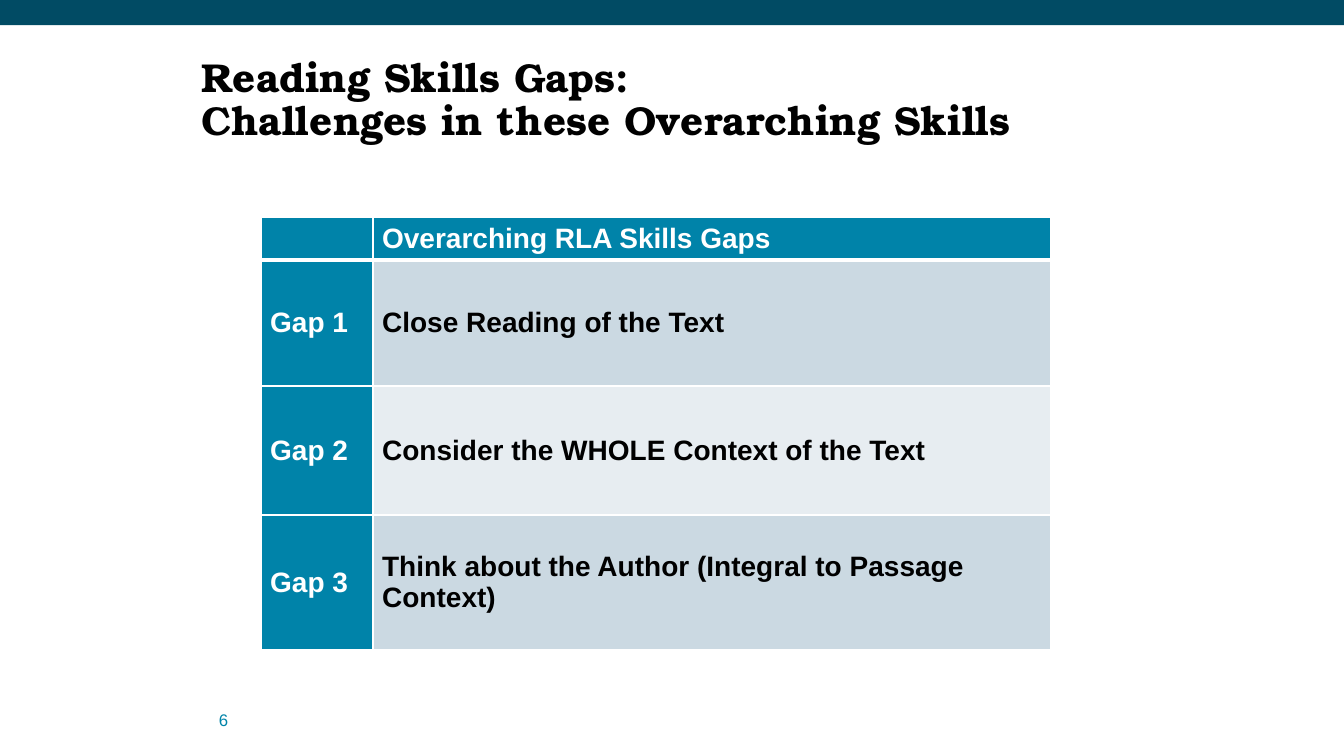
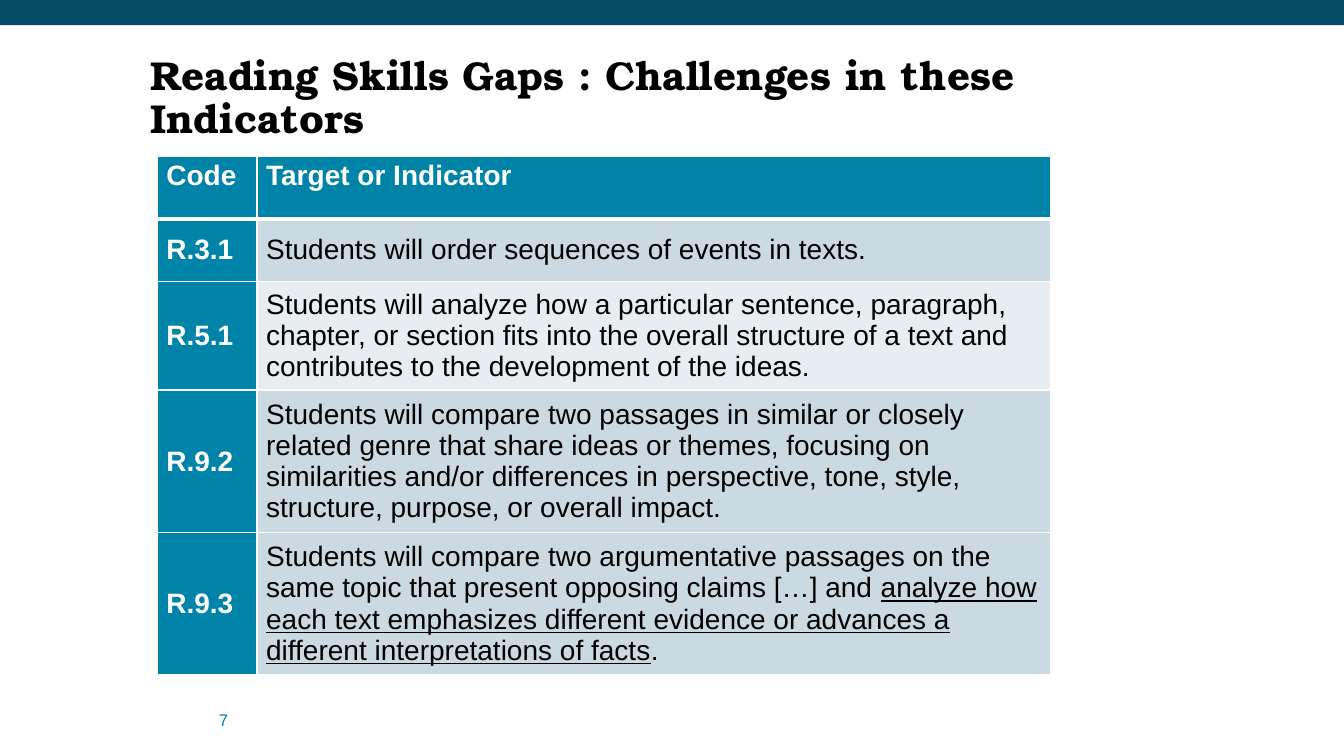
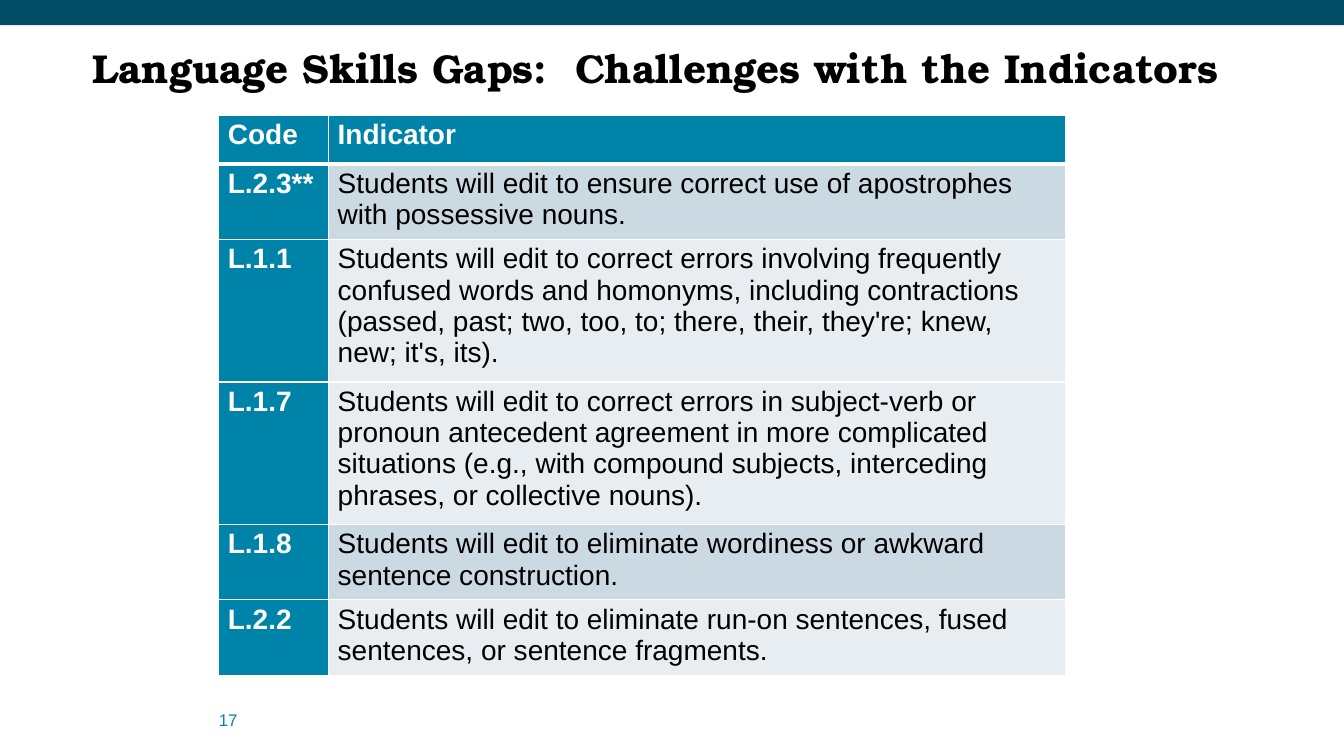
from dataclasses import dataclass

from pptx import Presentation
from pptx.dml.color import RGBColor
from pptx.enum.shapes import MSO_SHAPE as Shape
from pptx.enum.text import MSO_ANCHOR as Anchor
from pptx.oxml.ns import qn
from pptx.util import Inches, Pt
from lxml.etree import SubElement


@dataclass(frozen=True)
class Theme:
    """Colours, fonts and type sizes shared by all slides."""
    band: str = "014B64"
    accent: str = "0083A9"
    number: str = "0084A9"
    dark_tint: str = "CBD9E2"
    light_tint: str = "E7EDF1"
    white: str = "FFFFFF"
    black: str = "000000"
    title_font: str = "TeX Gyre Bonum"
    body_font: str = "Arial"
    title_size: float = 28.8
    table_size: float = 20
    number_size: float = 12
    thin_rule: float = 0.98
    thick_rule: float = 2.94


class SlideBuilder:
    """Holds the theme and the current slide and adds elements to it."""

    def __init__(self, deck, theme):
        """Keep the deck and its theme."""
        self.deck = deck
        self.theme = theme
        self.page = None

    def start(self, title, left, top, width, number):
        """Open a slide with its band, title and page number."""
        theme = self.theme
        self.page = self.deck.slides.add_slide(self.deck.slide_layouts[6])
        band = self.page.shapes.add_shape(
            Shape.RECTANGLE, 0, 0, self.deck.slide_width, Inches(0.25))
        band.shadow.inherit = False
        band.fill.solid()
        band.fill.fore_color.rgb = RGBColor.from_string(theme.band)
        band.line.fill.background()
        heading = self.text(title, left, top, width, 0.67, Anchor.TOP)
        heading.line_spacing = 0.9
        self.style(heading, theme.title_font, theme.title_size, theme.black, True)
        footer = self.text(str(number), 2.17, 6.89, 0.5, 0.35, Anchor.BOTTOM)
        self.style(footer, theme.body_font, theme.number_size, theme.number)

    def text(self, words, left, top, width, height, anchor):
        """Add a text box without margins and return its paragraph."""
        box = self.page.shapes.add_textbox(
            Inches(left), Inches(top), Inches(width), Inches(height))
        frame = box.text_frame
        frame.word_wrap = True
        frame.vertical_anchor = anchor
        frame.margin_left = frame.margin_right = 0
        frame.margin_top = frame.margin_bottom = 0
        para = frame.paragraphs[0]
        para.text = words
        return para

    def style(self, para, font, size, color, bold=False):
        """Format every run of a paragraph."""
        for span in para.runs:
            span.font.name = font
            span.font.size = Pt(size)
            span.font.bold = bold
            span.font.color.rgb = RGBColor.from_string(color)

    def table(self, left, top, widths, rows, header_anchor, body_anchor, bold=False):
        """Add a table from rows of code, text, height and fill."""
        heights = [row[2] for row in rows]
        grid = self.page.shapes.add_table(
            len(rows), len(widths), Inches(left), Inches(top),
            Inches(sum(widths)), Inches(sum(heights))).table
        grid.first_row = grid.horz_banding = False
        for column, width in zip(grid.columns, widths):
            column.width = Inches(width)
        for index, (code, words, height, fill) in enumerate(rows):
            grid.rows[index].height = Inches(height)
            header = index == 0
            anchor = header_anchor if header else body_anchor
            self.cell(grid.cell(index, 0), code, self.theme.accent, anchor, index, True)
            self.cell(grid.cell(index, 1), words, fill, anchor, index, header or bold)
        return grid

    def cell(self, cell, words, fill, anchor, row, bold):
        """Fill, rule and write one table cell."""
        theme = self.theme
        cell.margin_left = cell.margin_right = Inches(0.09)
        cell.margin_top = cell.margin_bottom = Inches(0.04)
        cell.vertical_anchor = anchor
        thick_side = {0: "lnB", 1: "lnT"}.get(row)
        for side in ("lnL", "lnR", "lnT", "lnB"):
            self.rule(cell, side, theme.thick_rule if side == thick_side else theme.thin_rule)
        cell.fill.solid()
        cell.fill.fore_color.rgb = RGBColor.from_string(fill)
        para = cell.text_frame.paragraphs[0]
        para.text = words
        color = theme.white if fill == theme.accent else theme.black
        self.style(para, theme.body_font, theme.table_size, color, bold)

    def rule(self, cell, side, width):
        """Draw one white border of a cell."""
        line = SubElement(cell._tc.get_or_add_tcPr(), qn(f"a:{side}"), w=str(Pt(width)))
        fill = SubElement(line, qn("a:solidFill"))
        SubElement(fill, qn("a:srgbClr"), val=self.theme.white)

    def underline(self, cell, phrase):
        """Underline one phrase of a cell."""
        para = cell.text_frame.paragraphs[0]
        before, after = para.text.split(phrase)
        para.text = before
        for words in (phrase, after):
            para.add_run().text = words
        self.style(para, self.theme.body_font, self.theme.table_size, self.theme.black)
        para.runs[1].font.underline = True


def main():
    """Build and save the three slides."""
    deck = Presentation()
    deck.slide_width, deck.slide_height = Inches(13.33), Inches(7.5)
    theme = Theme()
    head, dark, light = theme.accent, theme.dark_tint, theme.light_tint
    builder = SlideBuilder(deck, theme)

    builder.start("Reading Skills Gaps:\vChallenges in these Overarching Skills",
                  2, 0.57, 9.31, 6)
    builder.table(2.59, 2.16, (1.11, 6.72), [
        ("", "Overarching RLA Skills Gaps", 0.42, head),
        ("Gap 1", "Close Reading of the Text", 1.25, dark),
        ("Gap 2", "Consider the WHOLE Context of the Text", 1.28, light),
        ("Gap 3", "Think about the Author (Integral to Passage Context)", 1.34, dark),
    ], Anchor.MIDDLE, Anchor.MIDDLE, bold=True)

    builder.start("Reading Skills Gaps : Challenges in these Indicators",
                  1.49, 0.55, 10.78, 7)
    underlined = ("analyze how each text emphasizes different evidence or advances "
                  "a different interpretations of facts")
    indicators = builder.table(1.56, 1.55, (0.99, 7.87), [
        ("Code", "Target or Indicator", 0.62, head),
        ("R.3.1", "Students will order sequences of events in texts.", 0.62, dark),
        ("R.5.1", "Students will analyze how a particular sentence, paragraph, chapter, "
                  "or section fits into the overall structure of a text and contributes "
                  "to the development of the ideas.", 1.02, light),
        ("R.9.2", "Students will compare two passages in similar or closely related "
                  "genre that share ideas or themes, focusing on similarities and/or "
                  "differences in perspective, tone, style, structure, purpose, or "
                  "overall impact.", 1.33, dark),
        ("R.9.3", "Students will compare two argumentative passages on the same topic "
                  f"that present opposing claims […] and {underlined}.", 1.33, dark),
    ], Anchor.TOP, Anchor.MIDDLE)
    builder.underline(indicators.cell(4, 1), underlined)

    builder.start("Language Skills Gaps:  Challenges with the Indicators",
                  0.92, 0.48, 11.26, 17)
    builder.table(2.17, 1.14, (1.09, 7.31), [
        ("Code", "Indicator", 0.49, head),
        ("L.2.3**", "Students will edit to ensure correct use of apostrophes with "
                    "possessive nouns.", 0.71, dark),
        ("L.1.1", "Students will edit to correct errors involving frequently confused "
                  "words and homonyms, including contractions (passed, past; two, too, "
                  "to; there, their, they're; knew, new; it's, its).", 1.33, light),
        ("L.1.7", "Students will edit to correct errors in subject-verb or pronoun "
                  "antecedent agreement in more complicated situations (e.g., with "
                  "compound subjects, interceding phrases, or collective nouns).",
         1.33, light),
        ("L.1.8", "Students will edit to eliminate wordiness or awkward sentence "
                  "construction.", 0.71, dark),
        ("L.2.2", "Students will edit to eliminate run-on sentences, fused sentences, "
                  "or sentence fragments.", 0.71, light),
    ], Anchor.TOP, Anchor.TOP)

    deck.save("out.pptx")


if __name__ == "__main__":
    main()
